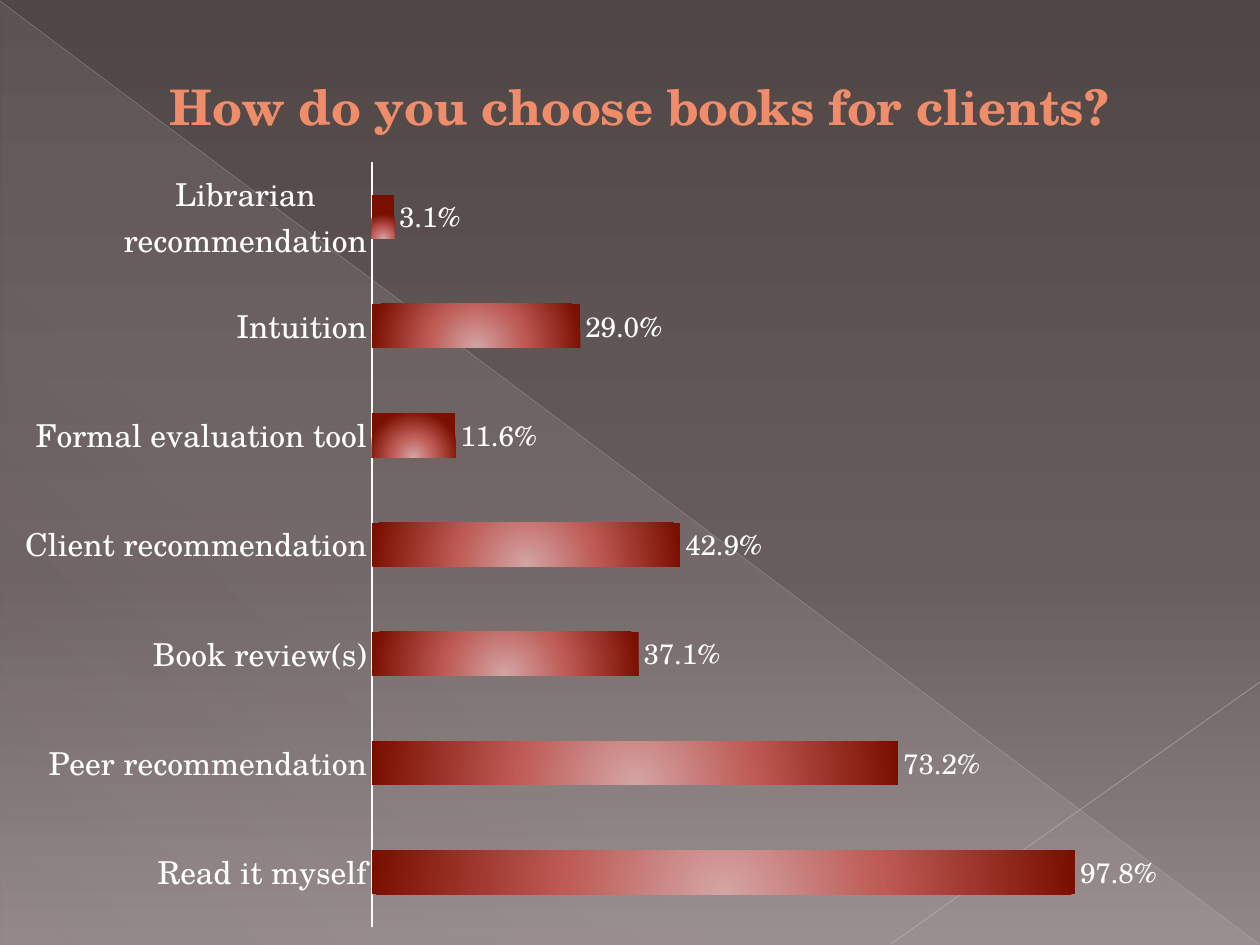
from typing import NamedTuple

import lxml.etree
import pptx
import pptx.chart.data
import pptx.dml.color
import pptx.enum.chart
import pptx.enum.shapes
import pptx.oxml
import pptx.oxml.ns
import pptx.util

RGBColor = pptx.dml.color.RGBColor
qn = pptx.oxml.ns.qn

EMU_PER_PX = 914400 / 126
FONT = "TeX Gyre Schola"
WHITE = RGBColor(0xFF, 0xFF, 0xFF)
CORAL = RGBColor(0xEF, 0x8C, 0x6A)
BG_TOP = RGBColor(0x4F, 0x46, 0x46)
BG_MIDDLE = RGBColor(0x68, 0x5D, 0x5D)
BG_BOTTOM = RGBColor(0x92, 0x87, 0x87)
CREAM = RGBColor(0xE9, 0xE5, 0xDC)
DIAGONAL_GREY = RGBColor(0xC1, 0xBE, 0xBE)
CORNER_GREY = RGBColor(0xC7, 0xC5, 0xC5)
BAR_CENTRE = RGBColor(0xD4, 0xA5, 0xA5)
BAR_MIDDLE = RGBColor(0xBE, 0x5B, 0x55)
BAR_EDGE = RGBColor(0x7A, 0x0F, 0x00)


class Box(NamedTuple):
    left: int
    top: int
    width: int
    height: int


class Stop(NamedTuple):
    percent: int
    color: RGBColor
    opacity: int = 100


class ThinLine(NamedTuple):
    start: tuple[int, int]
    end: tuple[int, int]
    color: RGBColor
    points: float
    opacity: int


class Answer(NamedTuple):
    label: str
    share: float


SLIDE = Box(0, 0, 1260, 945)
TRIANGLE = Box(1, 2, 1259, 943)
CHART = Box(0, 32, 1260, 913)
PLOT = Box(372, 162, 863, 765)
TITLE = Box(161, 54, 938, 50)
LINES = [
    ThinLine((0, 1), (1259, 944), DIAGONAL_GREY, 0.39, 35),
    ThinLine((1260, 682), (891, 944), CORNER_GREY, 0.47, 45),
]
ANSWERS = [
    Answer("Read it myself", 0.978),
    Answer("Peer recommendation", 0.732),
    Answer("Book review(s)", 0.371),
    Answer("Client recommendation", 0.429),
    Answer("Formal evaluation tool", 0.116),
    Answer("Intuition", 0.29),
    Answer("Librarian recommendation", 0.031),
]
BACKGROUND_STOPS = [Stop(0, BG_TOP), Stop(60, BG_MIDDLE), Stop(100, BG_BOTTOM)]
TRIANGLE_STOPS = [Stop(0, CREAM, 10), Stop(70, CREAM, 8), Stop(100, CREAM, 1)]
BAR_STOPS = [Stop(0, BAR_CENTRE), Stop(45, BAR_MIDDLE), Stop(100, BAR_EDGE)]


def px(length: int) -> int:
    return round(length * EMU_PER_PX)


def add_child(parent, tag: str, **attributes):
    child = lxml.etree.SubElement(parent, qn(tag))
    for name, value in attributes.items():
        child.set(name, str(value))
    return child


def set_opacity(color_element, percent: int) -> None:
    add_child(color_element, "a:alpha", val=percent * 1000)


def set_gradient(owner, stops: list[Stop], angle: int | None = None) -> None:
    """Swap the owner's solid fill for a linear gradient, or a radial one without angle."""
    solid = owner.find(qn("a:solidFill"))
    gradient = pptx.oxml.parse_xml(f"<a:gradFill {pptx.oxml.ns.nsdecls('a')} rotWithShape='1'/>")
    stop_list = add_child(gradient, "a:gsLst")
    for stop in stops:
        gs = add_child(stop_list, "a:gs", pos=stop.percent * 1000)
        color = add_child(gs, "a:srgbClr", val=stop.color)
        if stop.opacity < 100:
            set_opacity(color, stop.opacity)
    if angle is None:
        radial = add_child(gradient, "a:path", path="circle")
        add_child(radial, "a:fillToRect", l=50000, t=100000, r=50000, b=0)
    else:
        add_child(gradient, "a:lin", ang=angle * 60000, scaled=0)
    owner.replace(solid, gradient)


def add_triangle(s) -> None:
    kind = pptx.enum.shapes.MSO_SHAPE.RIGHT_TRIANGLE
    triangle = s.shapes.add_shape(kind, *map(px, TRIANGLE))
    triangle.shadow.inherit = False
    triangle.line.fill.background()
    triangle.fill.solid()
    set_gradient(triangle._element.spPr, TRIANGLE_STOPS, 133)


def add_line(s, line: ThinLine) -> None:
    kind = pptx.enum.shapes.MSO_CONNECTOR.STRAIGHT
    c = s.shapes.add_connector(kind, *map(px, line.start + line.end))
    c.line.color.rgb = line.color
    c.line.width = pptx.util.Pt(line.points)
    sp_pr = c._element.spPr
    set_opacity(sp_pr.find(".//" + qn("a:srgbClr")), line.opacity)
    add_child(sp_pr, "a:effectLst")


def place_in_chart(owner, index: int, box: Box, sized: bool) -> None:
    """Give a chart part a manual layout, inserted as the child at index."""
    for old in owner.findall(qn("c:layout")):
        owner.remove(old)
    layout = pptx.oxml.parse_xml(f"<c:layout {pptx.oxml.ns.nsdecls('c')}/>")
    manual = add_child(layout, "c:manualLayout")
    if sized:
        add_child(manual, "c:layoutTarget", val="inner")
    add_child(manual, "c:xMode", val="edge")
    add_child(manual, "c:yMode", val="edge")
    add_child(manual, "c:x", val=round((box.left - CHART.left) / CHART.width, 4))
    add_child(manual, "c:y", val=round((box.top - CHART.top) / CHART.height, 4))
    if sized:
        add_child(manual, "c:w", val=round(box.width / CHART.width, 4))
        add_child(manual, "c:h", val=round(box.height / CHART.height, 4))
    owner.insert(index, layout)


def style_font(font, points: int, color: RGBColor = WHITE, bold: bool = False) -> None:
    font.name = FONT
    font.size = pptx.util.Pt(points)
    font.color.rgb = color
    font.bold = bold


def add_answer_chart(s) -> None:
    data = pptx.chart.data.CategoryChartData(number_format="0.0%")
    data.categories = [answer.label for answer in ANSWERS]
    data.add_series("Series 1", [answer.share for answer in ANSWERS])
    kind = pptx.enum.chart.XL_CHART_TYPE.BAR_CLUSTERED
    chart = s.shapes.add_chart(kind, *map(px, CHART), data).chart
    style_font(chart.font, 10)
    chart.has_legend = False

    chart.has_title = True
    tf = chart.chart_title.text_frame
    tf.text = "How do you choose books for clients?"
    style_font(tf.paragraphs[0].font, 28, CORAL, bold=True)
    place_in_chart(chart.chart_title._element, 1, TITLE, sized=False)
    place_in_chart(chart._chartSpace.chart.plotArea, 0, PLOT, sized=True)

    no_tick = pptx.enum.chart.XL_TICK_MARK.NONE
    categories = chart.category_axis
    categories.major_tick_mark = no_tick
    categories.format.line.color.rgb = WHITE
    categories.format.line.width = pptx.util.Pt(1)
    style_font(categories.tick_labels.font, 18)
    values = chart.value_axis
    values.minimum_scale, values.maximum_scale = 0, 1.2
    values.has_major_gridlines = False
    values.visible = False

    plot = chart.plots[0]
    plot.gap_width = 150
    plot.vary_by_categories = False
    plot.has_data_labels = True
    labels = plot.data_labels
    labels.show_value = True
    labels.number_format = "0.0%"
    labels.number_format_is_linked = False
    labels.position = pptx.enum.chart.XL_LABEL_POSITION.OUTSIDE_END
    style_font(labels.font, 16)
    bars = plot.series[0]
    bars.format.fill.solid()
    set_gradient(bars._element.find(qn("c:spPr")), BAR_STOPS)


def main() -> None:
    prs = pptx.Presentation()
    prs.slide_width, prs.slide_height = px(SLIDE.width), px(SLIDE.height)
    s = prs.slides.add_slide(prs.slide_layouts[6])
    s.background.fill.solid()
    set_gradient(s._element.find(".//" + qn("p:bgPr")), BACKGROUND_STOPS, 90)
    add_triangle(s)
    for line in LINES:
        add_line(s, line)
    add_answer_chart(s)
    prs.save("out.pptx")


if __name__ == "__main__":
    main()
